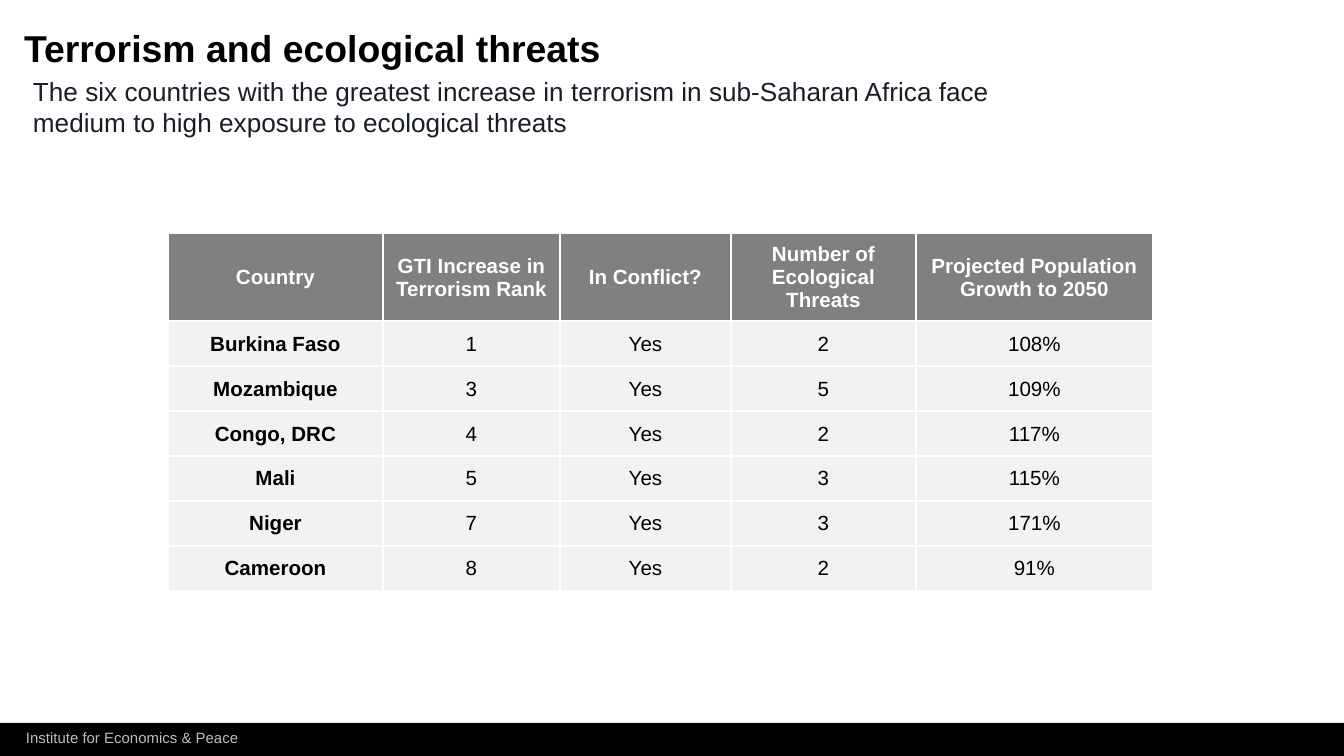
"""Build the slide on terrorism and ecological threats."""
from dataclasses import dataclass

from lxml import etree
from pptx import Presentation
from pptx.dml.color import RGBColor
from pptx.enum.shapes import MSO_SHAPE
from pptx.enum.text import MSO_ANCHOR, PP_ALIGN
from pptx.oxml.ns import qn
from pptx.util import Pt

RECTANGLE = MSO_SHAPE.RECTANGLE
TOP, MIDDLE = MSO_ANCHOR.TOP, MSO_ANCHOR.MIDDLE
CENTER = PP_ALIGN.CENTER

EMU_PER_PX = 914400 / 134.4
FONT = "Arial"
COLORS = {
    "title": "000000",
    "subtitle": "181E28",
    "bar": "000000",
    "footer": "BFBFBF",
    "header_fill": "808080",
    "header_text": "FFFFFF",
    "body_fill": "F2F2F2",
    "body_text": "000000",
    "border": "FFFFFF",
}

TABLE_LEFT, TABLE_TOP = 168, 233
COLUMN_WIDTHS = (215, 177, 171, 185, 237)
HEADER_HEIGHT, ROW_HEIGHT = 88, 45
HEADINGS = (
    "Country",
    "GTI Increase in Terrorism Rank",
    "In Conflict?",
    "Number of Ecological Threats",
    "Projected Population Growth to 2050",
)


@dataclass(frozen=True)
class Label:
    text: str
    box: tuple[int, int, int, int]
    size: int
    color: str
    inset_x: int = 0
    inset_y: int = 0
    bold: bool = False
    wrap: bool = True
    line_spacing: float = 1.0


@dataclass(frozen=True)
class Country:
    name: str
    rank: int
    in_conflict: str
    threats: int
    growth: str

    def cells(self) -> tuple[str, ...]:
        return (self.name, str(self.rank), self.in_conflict, str(self.threats), self.growth)


LABELS = (
    Label("Institute for Economics & Peace", (13, 722, 242, 32), 8, "footer", 13, 7, wrap=False),
    Label("Terrorism and ecological threats", (24, 30, 1087, 40), 20, "title",
          bold=True, line_spacing=0.9),
    Label("The six countries with the greatest increase in terrorism in sub-Saharan Africa face "
          "medium to high exposure to ecological threats", (24, 70, 999, 65), 14, "subtitle", 9, 5),
)
COUNTRIES = (
    Country("Burkina Faso", 1, "Yes", 2, "108%"),
    Country("Mozambique", 3, "Yes", 5, "109%"),
    Country("Congo, DRC", 4, "Yes", 2, "117%"),
    Country("Mali", 5, "Yes", 3, "115%"),
    Country("Niger", 7, "Yes", 3, "171%"),
    Country("Cameroon", 8, "Yes", 2, "91%"),
)


def px(length: int) -> int:
    return round(length * EMU_PER_PX)


def rgb(color: str) -> RGBColor:
    return RGBColor.from_string(COLORS[color])


def apply(target, formats: dict) -> None:
    for attribute, value in formats.items():
        setattr(target, attribute, value)


def style_font(font, size: int, color: str, bold: bool) -> None:
    apply(font, {"name": FONT, "size": Pt(size), "bold": bold})
    font.color.rgb = rgb(color)


def draw_bar(slide) -> None:
    bar = slide.shapes.add_shape(RECTANGLE, 0, px(723), px(1344), px(33))
    bar.shadow.inherit = False
    bar.fill.solid()
    bar.fill.fore_color.rgb = rgb("bar")
    bar.line.fill.background()


def draw_label(slide, label: Label) -> None:
    frame = slide.shapes.add_textbox(*map(px, label.box)).text_frame
    apply(frame, {
        "word_wrap": label.wrap,
        "vertical_anchor": TOP,
        "margin_left": px(label.inset_x),
        "margin_right": px(label.inset_x),
        "margin_top": px(label.inset_y),
        "margin_bottom": px(label.inset_y),
    })
    paragraph = frame.paragraphs[0]
    apply(paragraph, {"text": label.text, "line_spacing": label.line_spacing})
    style_font(paragraph.runs[0].font, label.size, label.color, label.bold)


def draw_borders(cell) -> None:
    properties = cell._tc.get_or_add_tcPr()
    for position, side in enumerate(("lnL", "lnR", "lnT", "lnB")):
        border = etree.Element(qn(f"a:{side}"), w=str(Pt(1)))
        fill = etree.SubElement(border, qn("a:solidFill"))
        etree.SubElement(fill, qn("a:srgbClr"), val=COLORS["border"])
        properties.insert(position, border)


def fill_cell(cell, text: str, part: str, bold: bool) -> None:
    apply(cell, {
        "text": text,
        "vertical_anchor": MIDDLE,
        "margin_left": px(1),
        "margin_right": px(1),
        "margin_top": px(1),
        "margin_bottom": 0,
    })
    cell.fill.solid()
    cell.fill.fore_color.rgb = rgb(f"{part}_fill")
    paragraph = cell.text_frame.paragraphs[0]
    paragraph.alignment = CENTER
    style_font(paragraph.runs[0].font, 11, f"{part}_text", bold)
    draw_borders(cell)


def draw_table(slide) -> None:
    rows = (HEADINGS, *(country.cells() for country in COUNTRIES))
    heights = (HEADER_HEIGHT, *[ROW_HEIGHT] * len(COUNTRIES))
    table = slide.shapes.add_table(
        len(rows), len(HEADINGS), px(TABLE_LEFT), px(TABLE_TOP),
        px(sum(COLUMN_WIDTHS)), px(sum(heights)),
    ).table
    for column, width in zip(table.columns, COLUMN_WIDTHS):
        column.width = px(width)
    for row_index, (values, height) in enumerate(zip(rows, heights)):
        table.rows[row_index].height = px(height)
        part = "body" if row_index else "header"
        for column_index, value in enumerate(values):
            bold = row_index == 0 or column_index == 0
            fill_cell(table.cell(row_index, column_index), value, part, bold)


def main() -> None:
    presentation = Presentation()
    apply(presentation, {"slide_width": px(1344), "slide_height": px(756)})
    slide = presentation.slides.add_slide(presentation.slide_layouts[6])
    draw_bar(slide)
    for label in LABELS:
        draw_label(slide, label)
    draw_table(slide)
    presentation.save("out.pptx")


if __name__ == "__main__":
    main()
